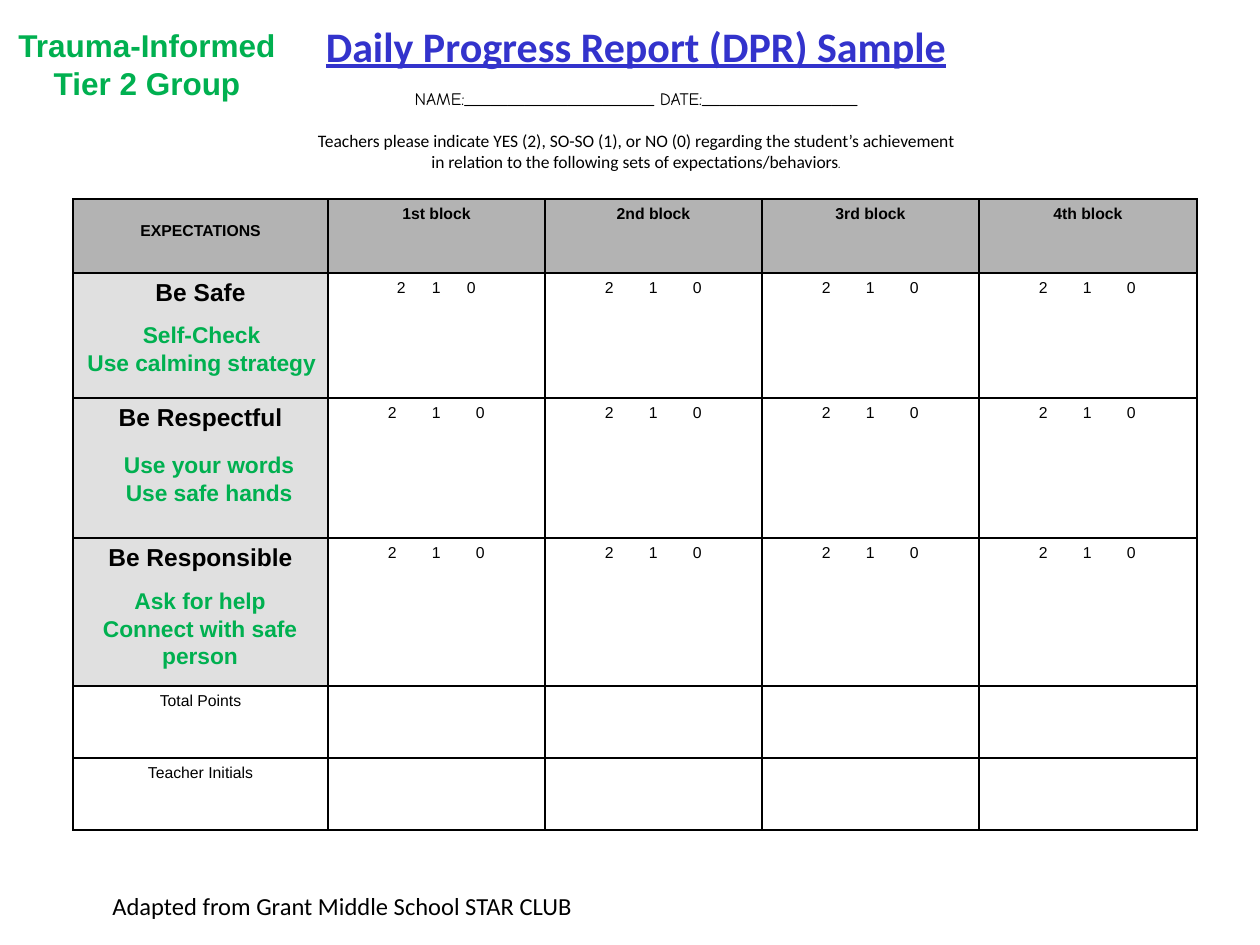
"""Build a one-slide daily progress report form with a score table."""
from dataclasses import dataclass

from lxml import etree
from pptx import Presentation
from pptx.dml.color import RGBColor
from pptx.enum.text import MSO_ANCHOR, PP_ALIGN
from pptx.oxml.ns import qn
from pptx.util import Emu, Pt

LEFT, MID = PP_ALIGN.LEFT, PP_ALIGN.CENTER
TOP = MSO_ANCHOR.TOP
PX = 914400 // 126


@dataclass(frozen=True)
class Theme:
    black: str = "000000"
    blue: str = "3333CC"
    green: str = "00B050"
    head: str = "B3B3B3"
    side: str = "E0E0E0"
    sans: str = "Arial"
    body: str = "Calibri"
    hand: str = "Comic Neue"
    title: int = 24
    group: int = 18
    large: int = 14
    tip: int = 13
    text: int = 10
    small: int = 9


T = Theme()


def style(size, face=T.sans, color=T.black, bold=False, line=False):
    return size, face, color, bold, line


TITLE = style(T.title, T.body, T.blue, True, True)
NAME = style(T.text, T.hand)
BODY = style(T.text, T.body)
DOT = style(T.small, T.hand)
NOTE = style(T.large, T.body)
GROUP = style(T.group, color=T.green, bold=True)
TIP = style(T.tip, color=T.green, bold=True)
HEAD = style(T.small, bold=True)
GOAL = style(T.large, bold=True)
CELL = style(T.small)

INTRO = [
    (0, [("Daily Progress Report (DPR) Sample", TITLE)]),
    (10, [("NAME:______________________ DATE:__________________", NAME)]),
    (12, [("Teachers please indicate YES (2), SO-SO (1), or NO (0) "
           "regarding the student’s achievement", BODY)]),
    (0, [("in relation to the following sets of expectations/behaviors", BODY),
         (".", DOT)]),
]
FOOTER = [(0, [("Adapted from Grant Middle School STAR CLUB", NOTE)])]
LABELS = [
    ((0, 20, 294, 90), ["Trauma-Informed", "Tier 2 Group"], GROUP),
    ((64, 315, 275, 96), ["Self-Check", "Use calming strategy"], TIP),
    ((83, 445, 252, 68), ["Use your words", "Use safe hands"], TIP),
    ((74, 581, 252, 96), ["Ask for help", "Connect with safe person"], TIP),
]
BLOCKS = ["1st block", "2nd block", "3rd block", "4th block"]
GOALS = ["Be Safe", "Be Respectful", "Be Responsible"]
TOTALS = ["Total Points", "Teacher Initials"]
SCORES = "2\t1\t0"
COLS = [255, 217, 217, 217, 218]
ROWS = [74, 125, 140, 148, 72, 72]
GRID = (73, 199, sum(COLS), sum(ROWS))
STEP, TIGHT, DIGIT = 44, 35, 9


def px(n):
    return Emu(n * PX)


def add_run(para, text, look):
    size, face, color, bold, line = look
    run = para.add_run()
    run.text = text
    font = run.font
    font.size, font.name, font.bold, font.underline = Pt(size), face, bold, line
    font.color.rgb = RGBColor.from_string(color)


def add_text(slide, box, paras, align=MID, wrap=True):
    frame = slide.shapes.add_textbox(*map(px, box)).text_frame
    frame.word_wrap = wrap
    frame.vertical_anchor = TOP
    for i, (gap, runs) in enumerate(paras):
        para = frame.add_paragraph() if i else frame.paragraphs[0]
        para.alignment = align
        if gap:
            para.space_before = Pt(gap)
        for text, look in runs:
            add_run(para, text, look)


def add_edges(cell):
    props = cell._tc.get_or_add_tcPr()
    for tag in ("a:lnL", "a:lnR", "a:lnT", "a:lnB"):
        edge = etree.SubElement(props, qn(tag), w=str(Pt(1)))
        fill = etree.SubElement(edge, qn("a:solidFill"))
        etree.SubElement(fill, qn("a:srgbClr"), val=T.black)


def fill_cell(cell, text, look, fill=None):
    add_edges(cell)
    if fill:
        cell.fill.solid()
        cell.fill.fore_color.rgb = RGBColor.from_string(fill)
    else:
        cell.fill.background()
    para = cell.text_frame.paragraphs[0]
    para.alignment = MID
    if text:
        add_run(para, text, look)


def set_tabs(cell, width, step):
    cell.margin_left = px((width - DIGIT) // 2 - step)
    cell.margin_right = 0
    para = cell.text_frame.paragraphs[0]
    para.alignment = LEFT
    tabs = etree.SubElement(para._p.get_or_add_pPr(), qn("a:tabLst"))
    for n in (1, 2):
        etree.SubElement(tabs, qn("a:tab"), pos=str(px(n * step)), algn="l")


def add_grid(slide):
    table = slide.shapes.add_table(len(ROWS), len(COLS), *map(px, GRID)).table
    table.first_row = table.horz_banding = False
    for col, width in zip(table.columns, COLS):
        col.width = px(width)
    for row, height in zip(table.rows, ROWS):
        row.height = px(height)
    for c, text in enumerate(["EXPECTATIONS"] + BLOCKS):
        fill_cell(table.cell(0, c), text, HEAD, T.head)
    table.cell(0, 0).margin_top = px(23)
    for r, goal in enumerate(GOALS, 1):
        fill_cell(table.cell(r, 0), goal, GOAL, T.side)
        for c in range(1, len(COLS)):
            cell = table.cell(r, c)
            fill_cell(cell, SCORES, CELL)
            set_tabs(cell, COLS[c], TIGHT if r == c == 1 else STEP)
    for r, name in enumerate(TOTALS, 1 + len(GOALS)):
        for c in range(len(COLS)):
            fill_cell(table.cell(r, c), "" if c else name, CELL)


def main():
    deck = Presentation()
    deck.slide_width, deck.slide_height = px(1260), px(945)
    slide = deck.slides.add_slide(deck.slide_layouts[6])
    add_text(slide, (296, 14, 680, 165), INTRO, wrap=False)
    add_grid(slide)
    add_text(slide, (100, 885, 540, 42), FOOTER, LEFT)
    for box, lines, look in LABELS:
        add_text(slide, box, [(0, [(line, look)]) for line in lines])
    deck.save("out.pptx")


if __name__ == "__main__":
    main()
